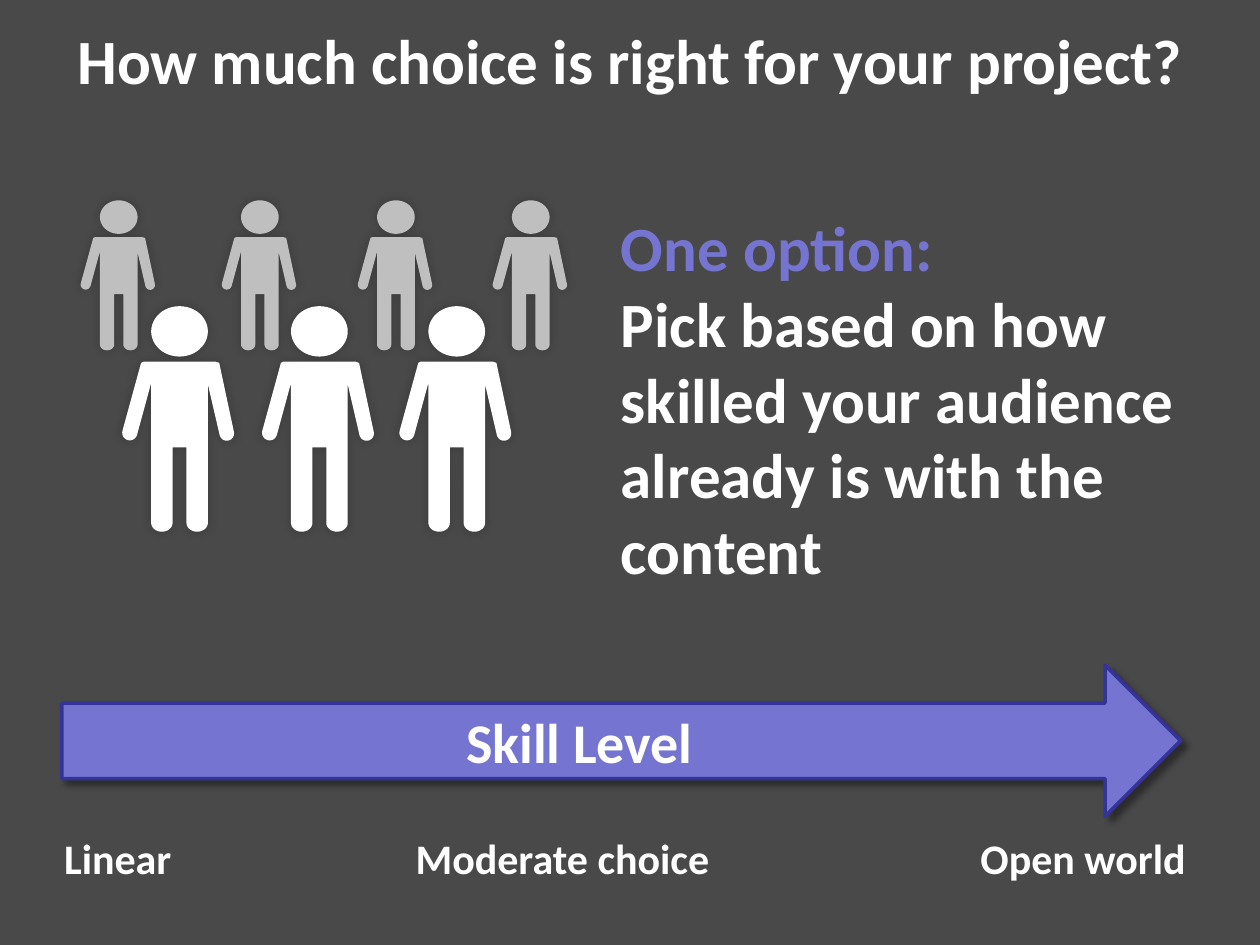
from dataclasses import dataclass
from math import cos, radians, sin

from lxml import etree
from pptx import Presentation
from pptx.dml.color import RGBColor
from pptx.enum.shapes import MSO_SHAPE
from pptx.enum.text import MSO_ANCHOR, MSO_AUTO_SIZE, PP_ALIGN
from pptx.oxml.ns import qn
from pptx.util import Emu, Inches, Pt

LEFT, CENTER, RIGHT = PP_ALIGN.LEFT, PP_ALIGN.CENTER, PP_ALIGN.RIGHT
ARROW = MSO_SHAPE.RIGHT_ARROW
TOP = MSO_ANCHOR.TOP
NO_FIT = MSO_AUTO_SIZE.NONE
COLS, ROWS = 100, 75
PERSON_HEIGHT = 179
DETAIL = 100


@dataclass(frozen=True)
class Theme:
    font: str = "Calibri"
    back: str = "494949"
    text: str = "FFFFFF"
    accent: str = "7575D1"
    edge: str = "333399"
    muted: str = "BFBFBF"
    shadow: str = "000000"
    heading: int = 36
    label: int = 32
    caption: int = 24


def arc(cx, cy, rx, ry, start, end, steps=16):
    angles = [radians(start + (end - start) * i / steps) for i in range(steps + 1)]
    return [(cx + rx * cos(a), cy + ry * sin(a)) for a in angles]


def person_outline():
    body = [(15, 45), (17, 44), (74, 44), (77, 45)]
    body += arc(83, 101, 5.8, 5.8, -15, 165)
    body += [(68, 62)]
    body += arc(59.5, 172, 8.5, 7, 0, 180)
    body += [(51, 112), (40, 112)]
    body += arc(31.5, 172, 8.5, 7, 0, 180)
    body += [(23, 61)]
    body += arc(6, 100.5, 6, 6, 15, 195)
    head = arc(45.5, 20, 22.5, 20, 0, 360, 48)
    return [[(x * DETAIL, y * DETAIL) for x, y in part] for part in (body, head)]


class Deck:
    def __init__(self, theme):
        self.theme = theme
        self.prs = Presentation()
        self.prs.slide_width, self.prs.slide_height = Inches(10), Inches(7.5)
        self.slide = self.prs.slides.add_slide(self.prs.slide_layouts[5])
        fill = self.slide.background.fill
        fill.solid()
        fill.fore_color.rgb = RGBColor.from_string(theme.back)

    def x(self, cols):
        return Emu(round(self.prs.slide_width * cols / COLS))

    def y(self, rows):
        return Emu(round(self.prs.slide_height * rows / ROWS))

    def box(self, left, top, width, height):
        return self.x(left), self.y(top), self.x(width), self.y(height)

    def set_lines(self, sp, lines, size, align):
        tf = sp.text_frame
        tf.word_wrap = True
        tf.auto_size = NO_FIT
        tf.vertical_anchor = TOP
        for i, (words, color) in enumerate(lines):
            p = tf.add_paragraph() if i else tf.paragraphs[0]
            p.alignment = align
            r = p.add_run()
            r.text = words
            r.font.name = self.theme.font
            r.font.size = Pt(size)
            r.font.bold = True
            r.font.color.rgb = RGBColor.from_string(color)

    def title(self, words, *area):
        sp = self.slide.shapes.title
        sp.left, sp.top, sp.width, sp.height = self.box(*area)
        self.set_lines(sp, [(words, self.theme.text)], self.theme.heading, CENTER)

    def text(self, lines, size, align, *area):
        sp = self.slide.shapes.add_textbox(*self.box(*area))
        self.set_lines(sp, lines, size, align)

    def paint(self, sp, fill, alpha, blur, dist=0, angle=0, edge=None):
        sp.fill.solid()
        sp.fill.fore_color.rgb = RGBColor.from_string(fill)
        if edge:
            sp.line.color.rgb = RGBColor.from_string(edge)
            sp.line.width = Pt(2)
        else:
            sp.line.fill.background()
        sp.shadow.inherit = False
        effects = sp._element.spPr.find(qn("a:effectLst"))
        outer = etree.SubElement(
            effects, qn("a:outerShdw"), blurRad=str(Pt(blur)), dist=str(Pt(dist)),
            dir=str(angle * 60000), rotWithShape="0")
        color = etree.SubElement(outer, qn("a:srgbClr"), val=self.theme.shadow)
        etree.SubElement(color, qn("a:alpha"), val=str(alpha * 1000))

    def person(self, left, top, height, color):
        body, head = person_outline()
        scale = self.y(height) / (PERSON_HEIGHT * DETAIL)
        fb = self.slide.shapes.build_freeform(*body[0], scale=scale)
        fb.add_line_segments(body[1:], close=True)
        fb.move_to(*head[0])
        fb.add_line_segments(head[1:], close=True)
        sp = fb.convert_to_shape(self.x(left), self.y(top))
        self.paint(sp, color, alpha=20, blur=6)

    def arrow(self, *area):
        sp = self.slide.shapes.add_shape(ARROW, *self.box(*area))
        self.paint(sp, self.theme.accent, alpha=40, blur=4, dist=3, angle=45,
                   edge=self.theme.edge)

    def save(self):
        self.prs.save("out.pptx")


def main():
    theme = Theme()
    deck = Deck(theme)
    deck.title("How much choice is right for your project?", 0, 1.2, 100, 7.1)
    advice = "Pick based on how skilled your audience already is with the content"
    deck.text([("One option:", theme.accent), (advice, theme.text)],
              theme.heading, LEFT, 48.3, 16.1, 47.7, 31.3)

    crowd = [
        (theme.muted, 15.9, 11.9, (6.4, 17.6, 28.4, 39.1)),
        (theme.text, 24.3, 17.9, (9.7, 20.8, 31.7)),
    ]
    for color, top, height, lefts in crowd:
        for left in lefts:
            deck.person(left, top, height, color)

    deck.arrow(4.9, 52.8, 88.8, 12)
    deck.text([("Skill Level", theme.text)], theme.label, CENTER, 11.2, 55.7, 69.6, 6.4)
    captions = [
        ("Linear", LEFT, 4.1, 16.2),
        ("Moderate choice", LEFT, 32, 28.6),
        ("Open world", RIGHT, 66.5, 28.6),
    ]
    for words, align, left, width in captions:
        deck.text([(words, theme.text)], theme.caption, align, left, 65.6, width, 5.1)
    deck.save()


if __name__ == "__main__":
    main()
